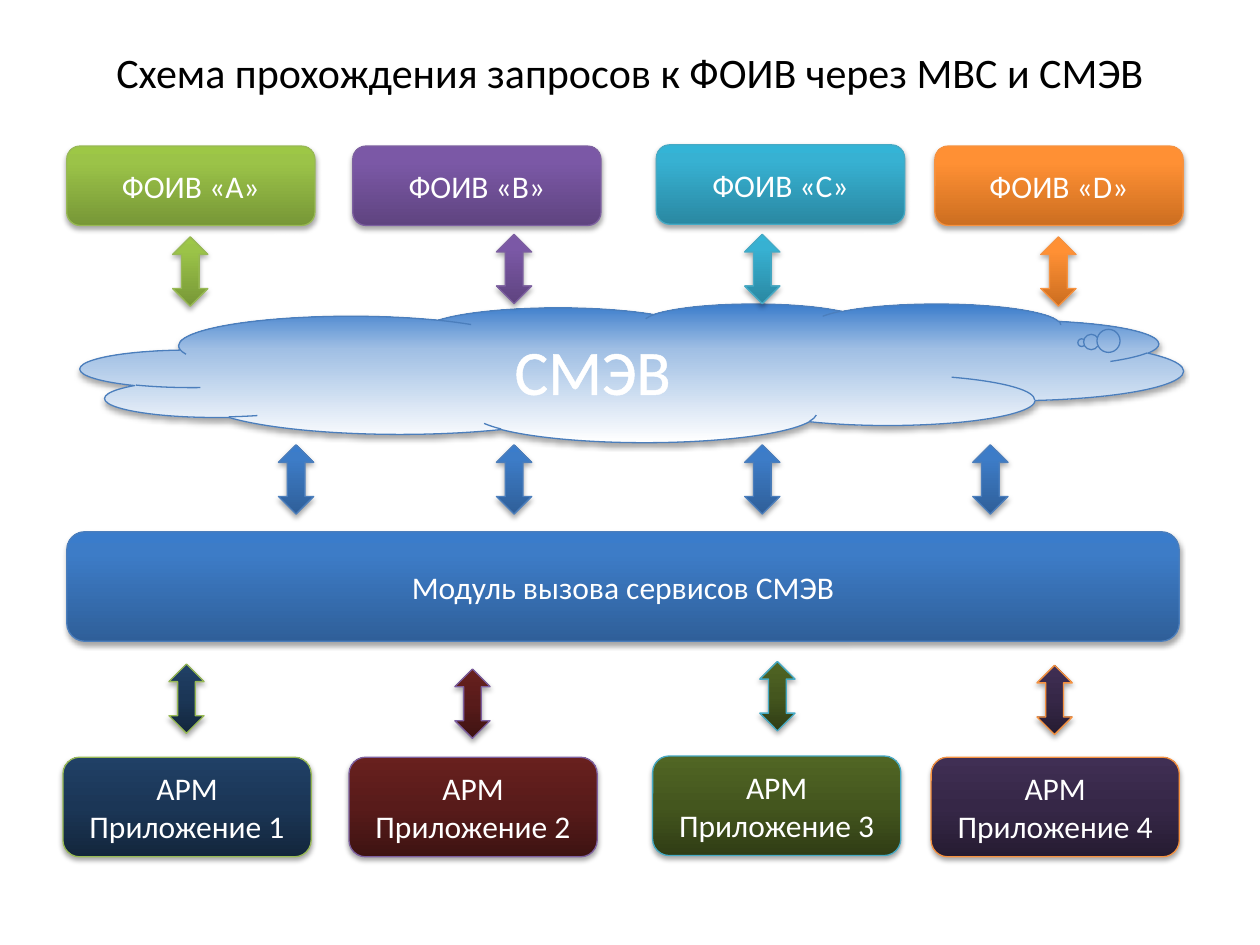
from dataclasses import dataclass

import lxml.etree
import pptx
import pptx.dml.color
import pptx.enum.shapes
import pptx.enum.text
import pptx.oxml.ns
import pptx.util

Inches = pptx.util.Inches
Pt = pptx.util.Pt
RGBColor = pptx.dml.color.RGBColor
SHAPE = pptx.enum.shapes.MSO_SHAPE
qn = pptx.oxml.ns.qn

WHITE = RGBColor(0xFF, 0xFF, 0xFF)
BLACK = RGBColor(0x00, 0x00, 0x00)
BLUE_LINE = RGBColor(0x4B, 0x7E, 0xBC)
GREEN_LINE = RGBColor(0x98, 0xB9, 0x55)
PURPLE_LINE = RGBColor(0x7D, 0x60, 0xA0)
TEAL_LINE = RGBColor(0x46, 0xAA, 0xC5)
ORANGE_LINE = RGBColor(0xF6, 0x92, 0x40)
BLUE_DARK = RGBColor(0x2F, 0x5F, 0x99)
BLUE_MID = RGBColor(0x3D, 0x7C, 0xC7)
BLUE_LIGHT = RGBColor(0x3A, 0x7C, 0xCB)
CLOUD_MID = RGBColor(0xA0, 0xBF, 0xE4)
GREEN = (RGBColor(0x77, 0x97, 0x37), RGBColor(0x9B, 0xC3, 0x48), RGBColor(0x9D, 0xC7, 0x46))
PURPLE = (RGBColor(0x5F, 0x44, 0x80), RGBColor(0x7B, 0x58, 0xA6), RGBColor(0x7C, 0x57, 0xA8))
TEAL = (RGBColor(0x2A, 0x88, 0xA2), RGBColor(0x37, 0xB1, 0xD2), RGBColor(0x34, 0xB4, 0xD6))
ORANGE = (RGBColor(0xCC, 0x6E, 0x20), RGBColor(0xFF, 0x90, 0x34), RGBColor(0xFF, 0x91, 0x36))
NAVY = (RGBColor(0x13, 0x26, 0x3C), RGBColor(0x1B, 0x36, 0x56), RGBColor(0x20, 0x40, 0x66))
MAROON = (RGBColor(0x3E, 0x13, 0x12), RGBColor(0x58, 0x1B, 0x1A), RGBColor(0x68, 0x20, 0x1E))
OLIVE = (RGBColor(0x30, 0x3D, 0x15), RGBColor(0x44, 0x56, 0x1E), RGBColor(0x51, 0x66, 0x24))
PLUM = (RGBColor(0x26, 0x1C, 0x32), RGBColor(0x36, 0x27, 0x47), RGBColor(0x40, 0x2F, 0x54))

BOX_W = 1.97
ARROW_W, ARROW_H = 0.28, 0.55


@dataclass(frozen=True)
class Style:
    colors: tuple[RGBColor, RGBColor, RGBColor]
    middle: int
    line: RGBColor


@dataclass(frozen=True)
class Node:
    text: str
    left: float
    top: float
    style: Style
    arrow_left: float
    arrow_top: float


BLUE = Style((BLUE_DARK, BLUE_MID, BLUE_LIGHT), 80, BLUE_LINE)
CLOUD = Style((WHITE, CLOUD_MID, BLUE_LIGHT), 67, BLUE_LINE)

AGENCIES = [
    Node("ФОИВ «А»", 0.53, 1.16, Style(GREEN, 80, GREEN_LINE), 1.37, 1.88),
    Node("ФОИВ «B»", 2.8, 1.16, Style(PURPLE, 80, PURPLE_LINE), 3.94, 1.86),
    Node("ФОИВ «C»", 5.21, 1.15, Style(TEAL, 80, TEAL_LINE), 5.91, 1.86),
    Node("ФОИВ «D»", 7.42, 1.16, Style(ORANGE, 80, ORANGE_LINE), 8.26, 1.88),
]
APPS = [
    Node("АРМ Приложение 1", 0.5, 6.01, Style(NAVY, 50, GREEN_LINE), 1.34, 5.27),
    Node("АРМ Приложение 2", 2.77, 6.01, Style(MAROON, 50, PURPLE_LINE), 3.61, 5.31),
    Node("АРМ Приложение 3", 5.18, 6, Style(OLIVE, 50, TEAL_LINE), 6.03, 5.25),
    Node("АРМ Приложение 4", 7.39, 6.01, Style(PLUM, 50, ORANGE_LINE), 8.23, 5.28),
]
MODULE_ARROWS = [2.21, 3.94, 5.91, 7.72]


def add_element(parent, tag: str, **attrs):
    return lxml.etree.SubElement(parent, qn(tag), {k: str(v) for k, v in attrs.items()})


def set_gradient(sp, style: Style) -> None:
    sp.fill.gradient()
    sp.fill.gradient_angle = 90
    stops = sp._element.spPr.find(qn("a:gradFill")).find(qn("a:gsLst"))
    for stop in list(stops):
        stops.remove(stop)
    for pos, color in zip((0, style.middle, 100), style.colors):
        add_element(add_element(stops, "a:gs", pos=pos * 1000), "a:srgbClr", val=color)


def set_shadow(sp) -> None:
    sp.shadow.inherit = False
    effects = sp._element.spPr.find(qn("a:effectLst"))
    shadow = add_element(effects, "a:outerShdw", blurRad=Pt(3.1), dist=Pt(1.8),
                         dir=5400000, rotWithShape=0)
    add_element(add_element(shadow, "a:srgbClr", val=BLACK), "a:alpha", val=35000)


def set_text(sp, text: str, size: float, color: RGBColor):
    tf = sp.text_frame
    frame_format = {"word_wrap": True, "auto_size": pptx.enum.text.MSO_AUTO_SIZE.NONE,
                    "vertical_anchor": pptx.enum.text.MSO_ANCHOR.MIDDLE}
    for name, value in frame_format.items():
        setattr(tf, name, value)
    p = tf.paragraphs[0]
    p.alignment = pptx.enum.text.PP_ALIGN.CENTER
    r = p.add_run()
    r.text = text
    for name, value in {"size": Pt(size), "name": "Calibri"}.items():
        setattr(r.font, name, value)
    r.font.color.rgb = color
    return r


def add_block(s, kind, left: float, top: float, width: float, height: float, style: Style):
    sp = s.shapes.add_shape(kind, Inches(left), Inches(top), Inches(width), Inches(height))
    set_gradient(sp, style)
    sp.line.color.rgb = style.line
    sp.line.width = Pt(0.75)
    set_shadow(sp)
    return sp


def add_arrow(s, left: float, top: float, style: Style) -> None:
    add_block(s, SHAPE.UP_DOWN_ARROW, left, top, ARROW_W, ARROW_H, style)


def add_box(s, text: str, left: float, top: float, width: float, height: float,
            style: Style) -> None:
    sp = add_block(s, SHAPE.ROUNDED_RECTANGLE, left, top, width, height, style)
    set_text(sp, text, 18, WHITE)


def add_nodes(s, nodes: list[Node], height: float) -> None:
    for node in nodes:
        add_box(s, node.text, node.left, node.top, BOX_W, height, node.style)
        add_arrow(s, node.arrow_left, node.arrow_top, node.style)


def add_cloud(s) -> None:
    sp = add_block(s, SHAPE.CLOUD_CALLOUT, 0.64, 2.41, 8.75, 1.1, CLOUD)
    sp.adjustments[0] = 0.408
    sp.adjustments[1] = -0.218
    r = set_text(sp, "СМЭВ", 36, WHITE)
    rPr = r.font._element
    outline = add_element(rPr, "a:ln", w=Pt(1.45))
    add_element(add_element(outline, "a:solidFill"), "a:srgbClr", val=WHITE)
    rPr.insert(0, outline)


def add_title(s) -> None:
    sp = s.shapes.title
    position = {"left": 0.5, "top": 0.3, "width": 9, "height": 0.54}
    for name, value in position.items():
        setattr(sp, name, Inches(value))
    set_text(sp, "Схема прохождения запросов к ФОИВ через МВС и СМЭВ", 24, BLACK)


def main() -> None:
    prs = pptx.Presentation()
    prs.slide_width = Inches(10)
    prs.slide_height = Inches(7.5)
    s = prs.slides.add_slide(prs.slide_layouts[5])
    add_title(s)
    add_cloud(s)
    add_box(s, "Модуль вызова сервисов СМЭВ", 0.53, 4.22, 8.83, 0.87, BLUE)
    for left in MODULE_ARROWS:
        add_arrow(s, left, 3.53, BLUE)
    add_nodes(s, AGENCIES, 0.63)
    add_nodes(s, APPS, 0.79)
    prs.save("out.pptx")


if __name__ == "__main__":
    main()
